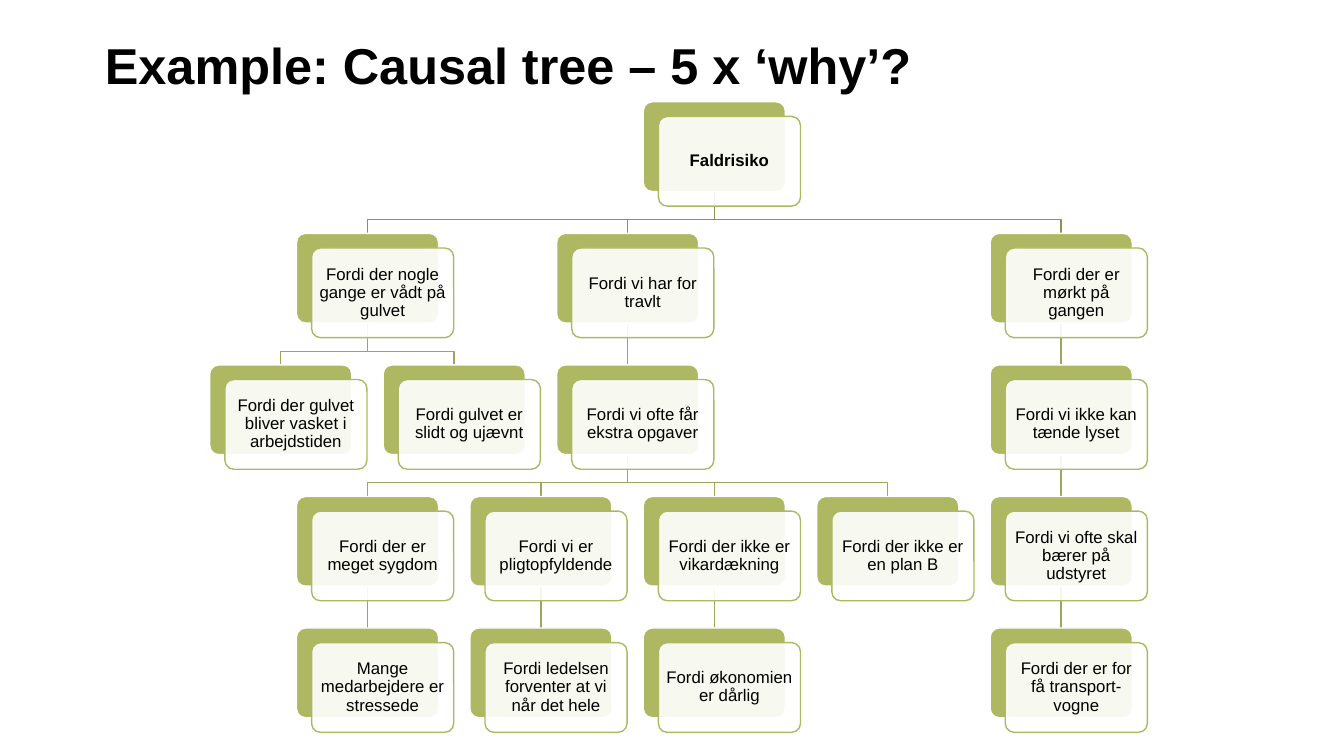
from dataclasses import dataclass
from lxml.etree import SubElement
from pptx import Presentation
from pptx.dml.color import RGBColor
from pptx.enum.shapes import MSO_CONNECTOR, MSO_SHAPE
from pptx.enum.text import MSO_ANCHOR, PP_ALIGN
from pptx.oxml.ns import qn
from pptx.util import Inches, Pt

TITLE = "Example: Causal tree – 5 x ‘why’?"
TREE = (5, "Faldrisiko", [
    (1, "Fordi der nogle gange er vådt på gulvet", [
        (0, "Fordi der gulvet bliver vasket i arbejdstiden", []),
        (2, "Fordi gulvet er slidt og ujævnt", []),
    ]),
    (4, "Fordi vi har for travlt", [
        (4, "Fordi vi ofte får ekstra opgaver", [
            (1, "Fordi der er meget sygdom", [
                (1, "Mange medarbejdere er stressede", []),
            ]),
            (3, "Fordi vi er pligtopfyldende", [
                (3, "Fordi ledelsen forventer at vi når det hele", []),
            ]),
            (5, "Fordi der ikke er vikardækning", [
                (5, "Fordi økonomien er dårlig", []),
            ]),
            (7, "Fordi der ikke er en plan B", []),
        ]),
    ]),
    (9, "Fordi der er mørkt på gangen", [
        (9, "Fordi vi ikke kan tænde lyset", [
            (9, "Fordi vi ofte skal bærer på udstyret", [
                (9, "Fordi der er for få transport- vogne", []),
            ]),
        ]),
    ]),
])


@dataclass
class Theme:
    font: str = "Arial"
    title: Pt = Pt(36)
    body: Pt = Pt(12)
    rule: Pt = Pt(1)
    ink: RGBColor = RGBColor(0, 0, 0)
    white: RGBColor = RGBColor(255, 255, 255)
    green: RGBColor = RGBColor(0xAE, 0xB8, 0x62)
    trunk: RGBColor = RGBColor(0x8B, 0x93, 0x4E)
    branch: RGBColor = RGBColor(0x9E, 0xA7, 0x59)


theme = Theme()
LEFT, STEP = Inches(2.08), Inches(0.86)
TOP, LAST, ROWS = Inches(1.01), Inches(6.23), 5
WIDE, HIGH = Inches(1.41), Inches(0.89)
SHIFT_X, SHIFT_Y = Inches(0.15), Inches(0.145)
BEND, PAD = Inches(0.28), Inches(0.05)


def corner(col, row):
    return LEFT + col * STEP, TOP + row * (LAST - TOP) // (ROWS - 1)


def style(text, size, bold):
    font = text.font
    font.name, font.size, font.bold = theme.font, size, bold
    font.color.rgb = theme.ink


def link(shapes, start, end, row):
    (x1, y1), (x2, y2) = start, end
    if x1 == x2:
        line = shapes.add_connector(MSO_CONNECTOR.STRAIGHT, x1, y1, x2, y2)
        SubElement(line._element.spPr, qn("a:effectLst"))
    else:
        path = shapes.build_freeform(x1, y1)
        path.add_line_segments(
            [(x1, y1 + BEND), (x2, y1 + BEND), (x2, y2)], close=False)
        line = path.convert_to_shape()
        line.fill.background()
        line.shadow.inherit = False
    line.line.color.rgb = theme.branch if row else theme.trunk
    line.line.width = theme.rule


def links(shapes, node, row=0):
    col, _, kids = node
    x, y = corner(col, row)
    for kid in kids:
        left, top = corner(kid[0], row + 1)
        link(shapes, (x + WIDE // 2, y + HIGH), (left + WIDE // 2, top), row)
        links(shapes, kid, row + 1)


def card(shapes, x, y, fill, line):
    box = shapes.add_shape(MSO_SHAPE.ROUNDED_RECTANGLE, x, y, WIDE, HIGH)
    box.adjustments[0] = 0.1
    box.shadow.inherit = False
    box.fill.solid()
    box.fill.fore_color.rgb = fill
    box.line.color.rgb = line
    box.line.width = theme.rule
    return box


def cards(shapes, node, row=0):
    col, words, kids = node
    x, y = corner(col, row)
    card(shapes, x, y, theme.green, theme.white)
    front = card(shapes, x + SHIFT_X, y + SHIFT_Y, theme.white, theme.green)
    color = front._element.spPr.find(qn("a:solidFill"))[0]
    SubElement(color, qn("a:alpha"), val="90000")
    frame = front.text_frame
    frame.word_wrap = True
    frame.vertical_anchor = MSO_ANCHOR.MIDDLE
    frame.margin_left = frame.margin_right = PAD
    frame.margin_top = frame.margin_bottom = PAD
    text = frame.paragraphs[0]
    text.text = words
    text.alignment = PP_ALIGN.CENTER
    text.line_spacing = 0.9
    style(text, theme.body, row == 0)
    for kid in kids:
        cards(shapes, kid, row + 1)


def main():
    deck = Presentation()
    deck.slide_width, deck.slide_height = Inches(13.33), Inches(7.5)
    shapes = deck.slides.add_slide(deck.slide_layouts[6]).shapes
    frame = shapes.add_textbox(
        Inches(1.04), Inches(0.34), Inches(10.79), Inches(0.63)).text_frame
    frame.word_wrap = True
    frame.margin_left = frame.margin_right = 0
    frame.margin_top = frame.margin_bottom = 0
    head = frame.paragraphs[0]
    head.text = TITLE
    style(head, theme.title, True)
    links(shapes, TREE)
    cards(shapes, TREE)
    deck.save("out.pptx")


if __name__ == "__main__":
    main()
